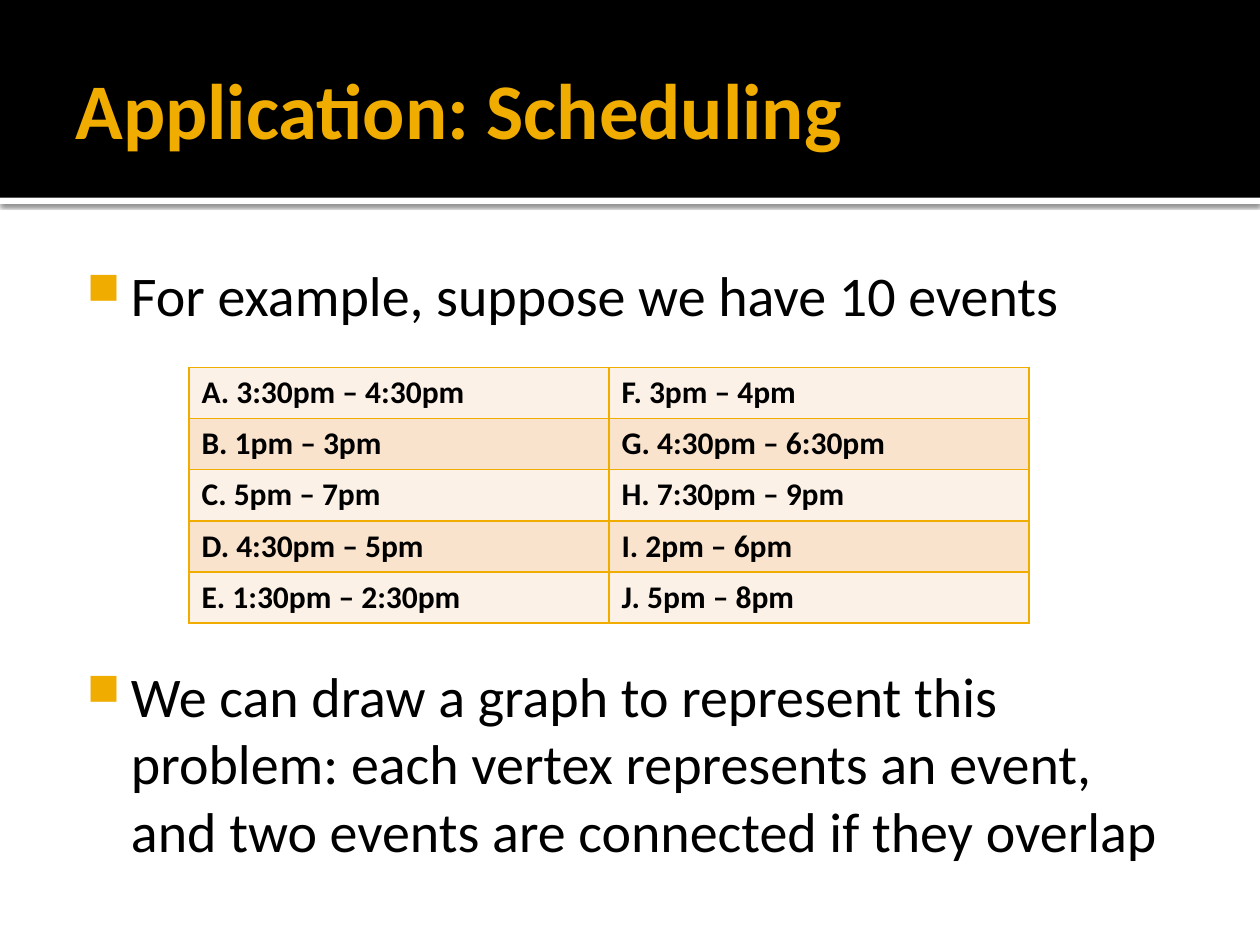
from lxml.etree import SubElement
from pptx import Presentation
from pptx.dml.color import RGBColor
from pptx.enum.shapes import MSO_SHAPE
from pptx.enum.text import MSO_ANCHOR
from pptx.oxml.ns import qn
from pptx.util import Pt

BLACK = RGBColor(0x00, 0x00, 0x00)
WHITE = RGBColor(0xFF, 0xFF, 0xFF)
GOLD = RGBColor(0xF0, 0xAD, 0x00)
CREAM = RGBColor(0xFC, 0xF1, 0xE7)
PEACH = RGBColor(0xF9, 0xE3, 0xCC)

EVENTS = [
    ("A. 3:30pm – 4:30pm", "F. 3pm – 4pm"),
    ("B. 1pm – 3pm", "G. 4:30pm – 6:30pm"),
    ("C. 5pm – 7pm", "H. 7:30pm – 9pm"),
    ("D. 4:30pm – 5pm", "I. 2pm – 6pm"),
    ("E. 1:30pm – 2:30pm", "J. 5pm – 8pm"),
]


def add_xml(parent, tag, **attributes):
    return SubElement(parent, qn(tag), {k: str(v) for k, v in attributes.items()})


class SlideBuilder:
    font_name = "Calibri"

    def __init__(self, slide):
        self.slide = slide

    def format_text(self, para, size, color, bold=False):
        for span in para.runs:
            font = span.font
            font.name, font.size, font.bold = self.font_name, Pt(size), bold
            font.color.rgb = color

    def band(self, top, height, color, shadow=False):
        shape = self.slide.shapes.add_shape(
            MSO_SHAPE.RECTANGLE, 0, Pt(top), Pt(720), Pt(height))
        shape.shadow.inherit = False
        shape.fill.solid()
        shape.fill.fore_color.rgb = color
        shape.line.fill.background()
        if shadow:
            effects = shape._element.spPr.find(qn("a:effectLst"))
            outer = add_xml(effects, "a:outerShdw", blurRad=Pt(2.5), dist=Pt(0.8),
                            dir=5400000, algn="tl", rotWithShape=0)
            shade = add_xml(outer, "a:srgbClr", val=BLACK)
            add_xml(shade, "a:alpha", val=60000)

    def text_box(self, left, top, width, height, insets, anchor=MSO_ANCHOR.TOP):
        box = self.slide.shapes.add_textbox(Pt(left), Pt(top), Pt(width), Pt(height))
        frame = box.text_frame
        frame.word_wrap = True
        frame.vertical_anchor = anchor
        (frame.margin_left, frame.margin_top,
         frame.margin_right, frame.margin_bottom) = map(Pt, insets)
        return frame

    def title(self, text):
        frame = self.text_box(36, 12.24, 648, 98.64, (7.2, 3.6, 3.6, 3.6),
                              MSO_ANCHOR.MIDDLE)
        frame.text = text
        self.format_text(frame.paragraphs[0], 45, GOLD, bold=True)

    def bullets(self, texts, gap):
        frame = self.text_box(36, 141.5, 648, 362, (4.32, 7.2, 7.2, 3.6))
        frame.text = "\n".join(texts)
        for index, para in enumerate(frame.paragraphs):
            self.format_text(para, 32, BLACK)
            para.space_before = Pt(gap if index else 0)
            properties = para._p.get_or_add_pPr()
            properties.set("marL", str(Pt(34.56)))
            properties.set("indent", str(Pt(-25.2)))
            bullet_color = add_xml(properties, "a:buClr")
            add_xml(bullet_color, "a:srgbClr", val=GOLD)
            add_xml(properties, "a:buSzPct", val=80000)
            add_xml(properties, "a:buChar", char="■")

    def table(self, rows, left, top, width, height):
        table = self.slide.shapes.add_table(
            len(rows), len(rows[0]), Pt(left), Pt(top), Pt(width), Pt(height)).table
        table.first_row = False
        for row_index, row in enumerate(rows):
            for column_index, text in enumerate(row):
                cell = table.cell(row_index, column_index)
                cell.text = text
                cell.vertical_anchor = MSO_ANCHOR.TOP
                self.format_text(cell.text_frame.paragraphs[0], 18, BLACK, bold=True)
                self.cell_borders(cell)
                cell.fill.solid()
                cell.fill.fore_color.rgb = PEACH if row_index % 2 else CREAM

    def cell_borders(self, cell):
        properties = cell._tc.get_or_add_tcPr()
        for side in ("L", "R", "T", "B"):
            border = add_xml(properties, f"a:ln{side}", w=Pt(1))
            fill = add_xml(border, "a:solidFill")
            add_xml(fill, "a:srgbClr", val=GOLD)


def main():
    deck = Presentation()
    deck.slide_width, deck.slide_height = Pt(720), Pt(540)
    page = SlideBuilder(deck.slides.add_slide(deck.slide_layouts[6]))

    # Header
    page.band(113, 3.6, WHITE, shadow=True)
    page.band(0, 113, BLACK)
    page.title("Application: Scheduling")

    # Explanation, with room for the table between the two points
    page.bullets([
        "For example, suppose we have 10 events",
        "We can draw a graph to represent this problem: each vertex represents "
        "an event, and two events are connected if they overlap",
    ], gap=191)

    # Event times
    page.table(EVENTS, left=108, top=210, width=480, height=146)

    deck.save("out.pptx")


if __name__ == "__main__":
    main()
